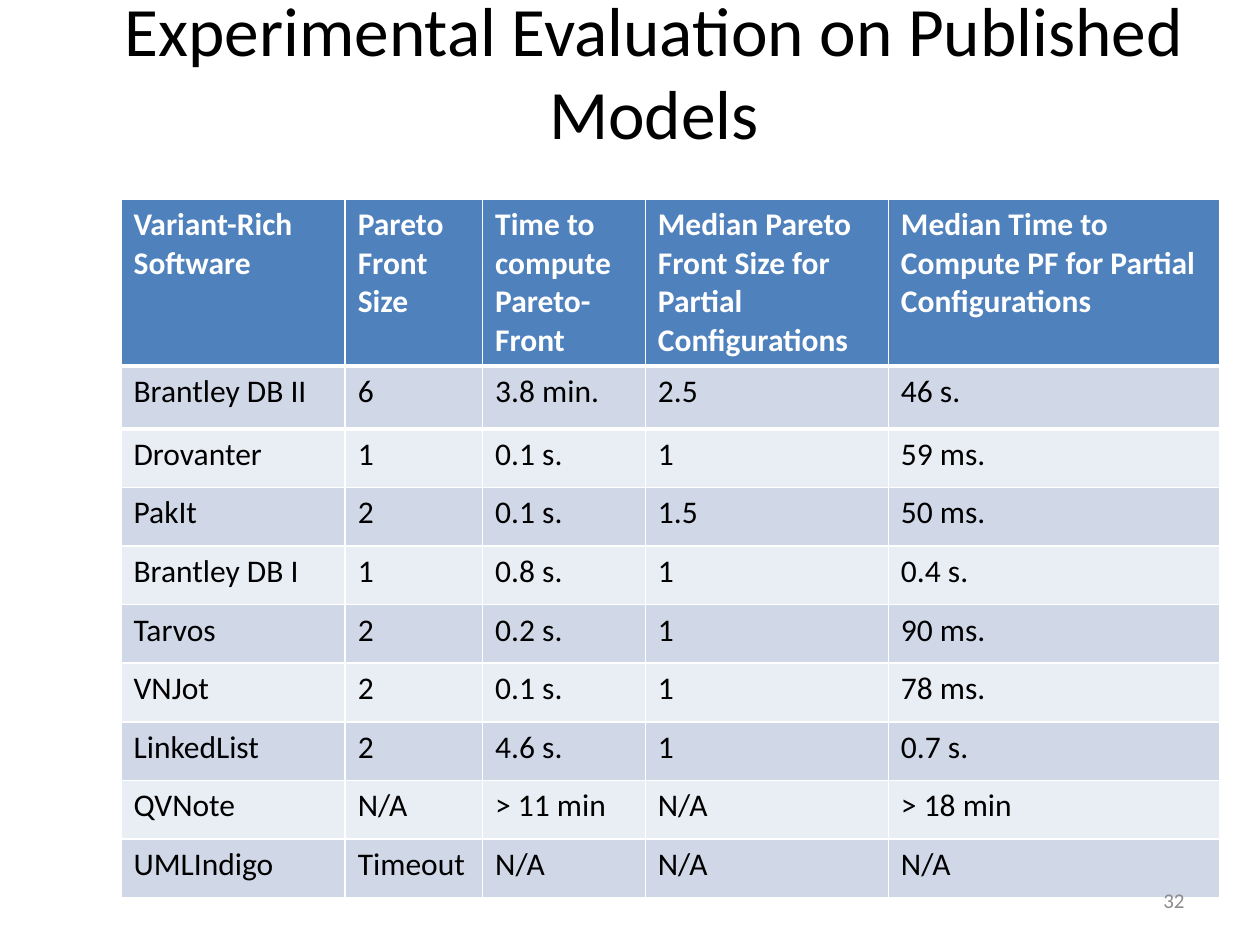
from lxml import etree
from pptx import Presentation
from pptx import util as u
from pptx.dml.color import RGBColor
from pptx.enum import text
from pptx.oxml import ns

BLACK = RGBColor(0x00, 0x00, 0x00)
WHITE = RGBColor(0xFF, 0xFF, 0xFF)
GREY = RGBColor(0x8C, 0x8C, 0x8C)
HEADER_BLUE = RGBColor(0x4F, 0x81, 0xBD)
BANDS = (RGBColor(0xE9, 0xED, 0xF4), RGBColor(0xD0, 0xD8, 0xE8))

TITLE = "Experimental Evaluation on Published Models"
PAGE_NUMBER = "32"
RESULTS = [
    ("Variant-Rich Software", "Pareto Front Size", "Time to compute Pareto-Front",
     "Median Pareto Front Size for Partial Configurations",
     "Median Time to Compute PF for Partial Configurations"),
    ("Brantley DB II", "6", "3.8 min.", "2.5", "46 s."),
    ("Drovanter", "1", "0.1 s.", "1", "59 ms."),
    ("PakIt", "2", "0.1 s.", "1.5", "50 ms."),
    ("Brantley DB I", "1", "0.8 s.", "1", "0.4 s."),
    ("Tarvos", "2", "0.2 s.", "1", "90 ms."),
    ("VNJot", "2", "0.1 s.", "1", "78 ms."),
    ("LinkedList", "2", "4.6 s.", "1", "0.7 s."),
    ("QVNote", "N/A", "> 11 min", "N/A", "> 18 min"),
    ("UMLIndigo", "Timeout", "N/A", "N/A", "N/A"),
]
COLUMN_WIDTHS = (4.52, 2.77, 3.28, 4.9, 6.67)
ROW_HEIGHTS = [3.36, 1.27] + [1.18] * (len(RESULTS) - 2)


def write(frame, words, size=18, color=BLACK, bold=False, align=text.PP_ALIGN.LEFT):
    paragraph = frame.paragraphs[0]
    paragraph.alignment = align
    run = paragraph.add_run()
    run.text = words
    run.font.name = "Calibri"
    run.font.size = u.Pt(size)
    run.font.bold = bold
    run.font.color.rgb = color


def add_label(slide, words, left, top, width, height, **style):
    frame = slide.shapes.add_textbox(u.Cm(left), u.Cm(top), u.Cm(width), u.Cm(height)).text_frame
    frame.word_wrap = True
    frame.vertical_anchor = text.MSO_ANCHOR.MIDDLE
    write(frame, words, **style)


def rule_off(cell, edge, points):
    properties = cell._tc.get_or_add_tcPr()
    line = etree.Element(ns.qn(f"a:{edge}"), w=str(u.Pt(points)))
    fill = etree.SubElement(line, ns.qn("a:solidFill"))
    etree.SubElement(fill, ns.qn("a:srgbClr"), val=str(WHITE))
    properties.insert(0, line)


def add_results(slide, left, top):
    table = slide.shapes.add_table(
        len(RESULTS), len(COLUMN_WIDTHS), u.Cm(left), u.Cm(top),
        u.Cm(sum(COLUMN_WIDTHS)), u.Cm(sum(ROW_HEIGHTS))).table
    for column, width in zip(table.columns, COLUMN_WIDTHS):
        column.width = u.Cm(width)
    for index, (row, height, values) in enumerate(zip(table.rows, ROW_HEIGHTS, RESULTS)):
        row.height = u.Cm(height)
        header = index == 0
        for cell, value in zip(row.cells, values):
            cell.fill.solid()
            cell.fill.fore_color.rgb = HEADER_BLUE if header else BANDS[index % 2]
            write(cell.text_frame, value, color=WHITE if header else BLACK, bold=header)
            if header:
                rule_off(cell, "lnB", 3)
            elif index == 1:
                rule_off(cell, "lnT", 3)


def main():
    deck = Presentation()
    deck.slide_width, deck.slide_height = u.Cm(25.4), u.Cm(19.05)
    slide = deck.slides.add_slide(deck.slide_layouts[6])
    add_label(slide, TITLE, 1.27, 0.76, 23.83, 1.32, size=39.6, align=text.PP_ALIGN.CENTER)
    add_results(slide, 2.44, 4.02)
    add_label(slide, PAGE_NUMBER, 18.2, 17.65, 5.93, 1.01,
              size=12, color=GREY, align=text.PP_ALIGN.RIGHT)
    deck.save("out.pptx")


if __name__ == "__main__":
    main()
